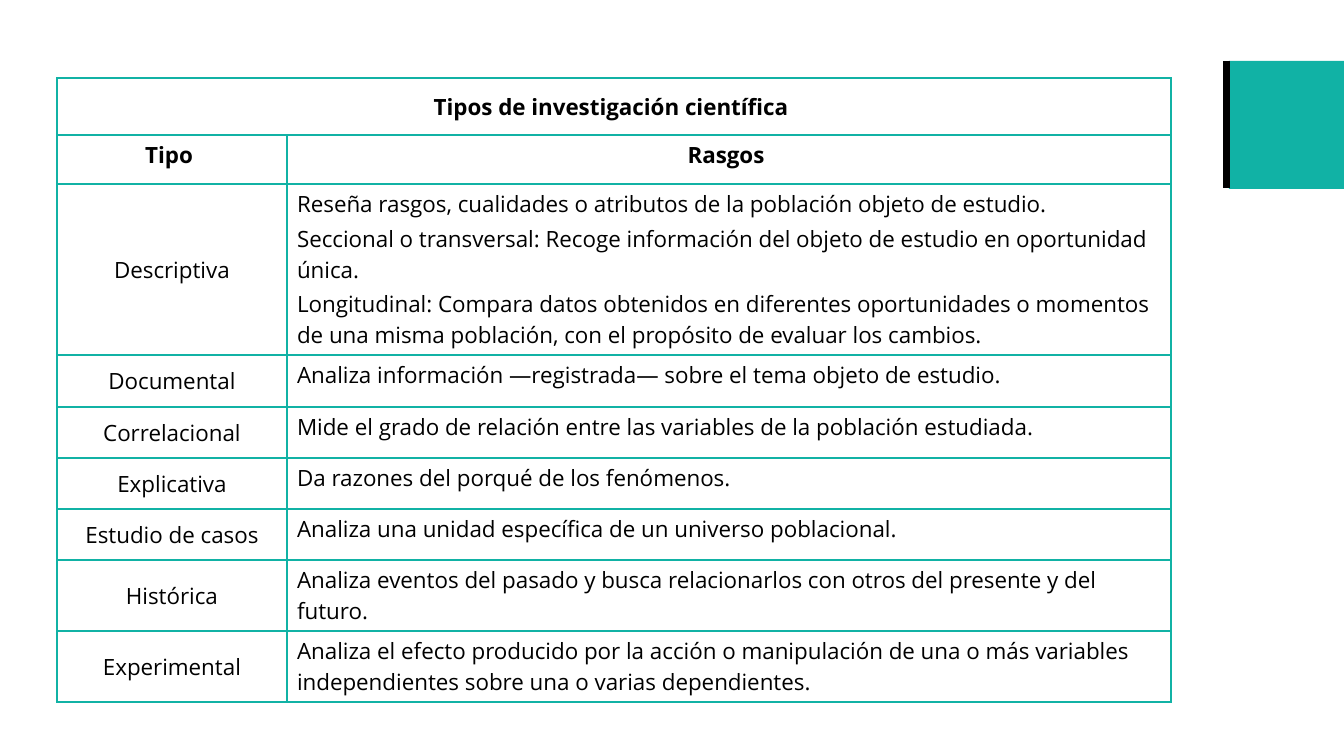
from dataclasses import dataclass

from lxml import etree
from pptx import Presentation
from pptx.dml.color import RGBColor
from pptx.enum.shapes import MSO_CONNECTOR, MSO_SHAPE
from pptx.enum.text import MSO_ANCHOR, PP_ALIGN
from pptx.oxml import parse_xml
from pptx.oxml.ns import nsdecls, qn
from pptx.util import Emu, Pt


@dataclass(frozen=True)
class Theme:
    accent: RGBColor = RGBColor(0x11, 0xB2, 0xA5)
    ink: RGBColor = RGBColor(0, 0, 0)
    paper: RGBColor = RGBColor(255, 255, 255)
    font: str = "Open Sans"
    size: Pt = Pt(16)
    gap: Pt = Pt(3.2)
    border: Pt = Pt(1)
    bar: Pt = Pt(5)


THEME = Theme()
COLUMN_WIDTHS = [230, 884]
ROW_HEIGHTS = [57, 49, 171, 52, 51, 51, 51, 70, 71]
HEADINGS = [
    ("Tipos de investigación científica ", []),
    ("Tipo ", ["Rasgos "]),
]
RESEARCH_TYPES = [
    ("Descriptiva", [
        "Reseña rasgos, cualidades o atributos de la población objeto de estudio.",
        "Seccional o transversal: Recoge información del objeto de estudio en "
        "oportunidad única.",
        "Longitudinal: Compara datos obtenidos en diferentes oportunidades o momentos "
        "de una misma población, con el propósito de evaluar los cambios.",
    ]),
    ("Documental", ["Analiza información —registrada— sobre el tema objeto de estudio."]),
    ("Correlacional", [
        "Mide el grado de relación entre las variables de la población estudiada."]),
    ("Explicativa", ["Da razones del porqué de los fenómenos."]),
    ("Estudio de casos", ["Analiza una unidad específica de un universo poblacional."]),
    ("Histórica", [
        "Analiza eventos del pasado y busca relacionarlos con otros del presente y del "
        "futuro."]),
    ("Experimental", [
        "Analiza el efecto producido por la acción o manipulación de una o más variables "
        "independientes sobre una o varias dependientes."]),
]


def px(length):
    return Emu(round(length * 914400 / 100.8))


def style_cell(cell):
    """Give the cell a plain fill and accent borders on all four sides."""
    cell.fill.solid()
    cell.fill.fore_color.rgb = THEME.paper
    properties = cell._tc.get_or_add_tcPr()
    for position, side in enumerate(("lnL", "lnR", "lnT", "lnB")):
        properties.insert(position, parse_xml(
            f'<a:{side} {nsdecls("a")} w="{THEME.border}"><a:solidFill>'
            f'<a:srgbClr val="{THEME.accent}"/></a:solidFill></a:{side}>'))


presentation = Presentation()
presentation.slide_width, presentation.slide_height = px(1344), px(756)
slide = presentation.slides.add_slide(presentation.slide_layouts[6])

# Corner decoration
corner = slide.shapes.add_shape(MSO_SHAPE.RECTANGLE, px(1229), px(61), px(115), px(128))
corner.shadow.inherit = False
corner.fill.solid()
corner.fill.fore_color.rgb = THEME.accent
corner.line.fill.background()

bar = slide.shapes.add_connector(
    MSO_CONNECTOR.STRAIGHT, px(1227), px(61), px(1227), px(188))
bar.line.color.rgb = THEME.ink
bar.line.width = THEME.bar
etree.SubElement(bar._element.spPr, qn("a:effectLst"))

# Table of research types
rows = HEADINGS + RESEARCH_TYPES
table = slide.shapes.add_table(
    len(rows), len(COLUMN_WIDTHS), px(57), px(78),
    px(sum(COLUMN_WIDTHS)), px(sum(ROW_HEIGHTS))).table
table.first_row = table.horz_banding = False
for column, width in zip(table.columns, COLUMN_WIDTHS):
    column.width = px(width)
for row, height in zip(table.rows, ROW_HEIGHTS):
    row.height = px(height)
table.cell(0, 0).merge(table.cell(0, 1))

for row_index, (research_type, traits) in enumerate(rows):
    is_heading = row_index < len(HEADINGS)
    for column_index, texts in enumerate(([research_type], traits)):
        cell = table.cell(row_index, column_index)
        style_cell(cell)
        if column_index == 0 and row_index != 1:
            cell.vertical_anchor = MSO_ANCHOR.MIDDLE
        centred = is_heading or column_index == 0
        for text_index, text in enumerate(texts):
            frame = cell.text_frame
            paragraph = frame.add_paragraph() if text_index else frame.paragraphs[0]
            paragraph.text = text
            paragraph.alignment = PP_ALIGN.CENTER if centred else PP_ALIGN.LEFT
            if text_index:
                paragraph.space_before = THEME.gap
            paragraph.font.name = THEME.font
            paragraph.font.size = THEME.size
            paragraph.font.bold = is_heading
            paragraph.font.color.rgb = THEME.ink

presentation.save("out.pptx")
